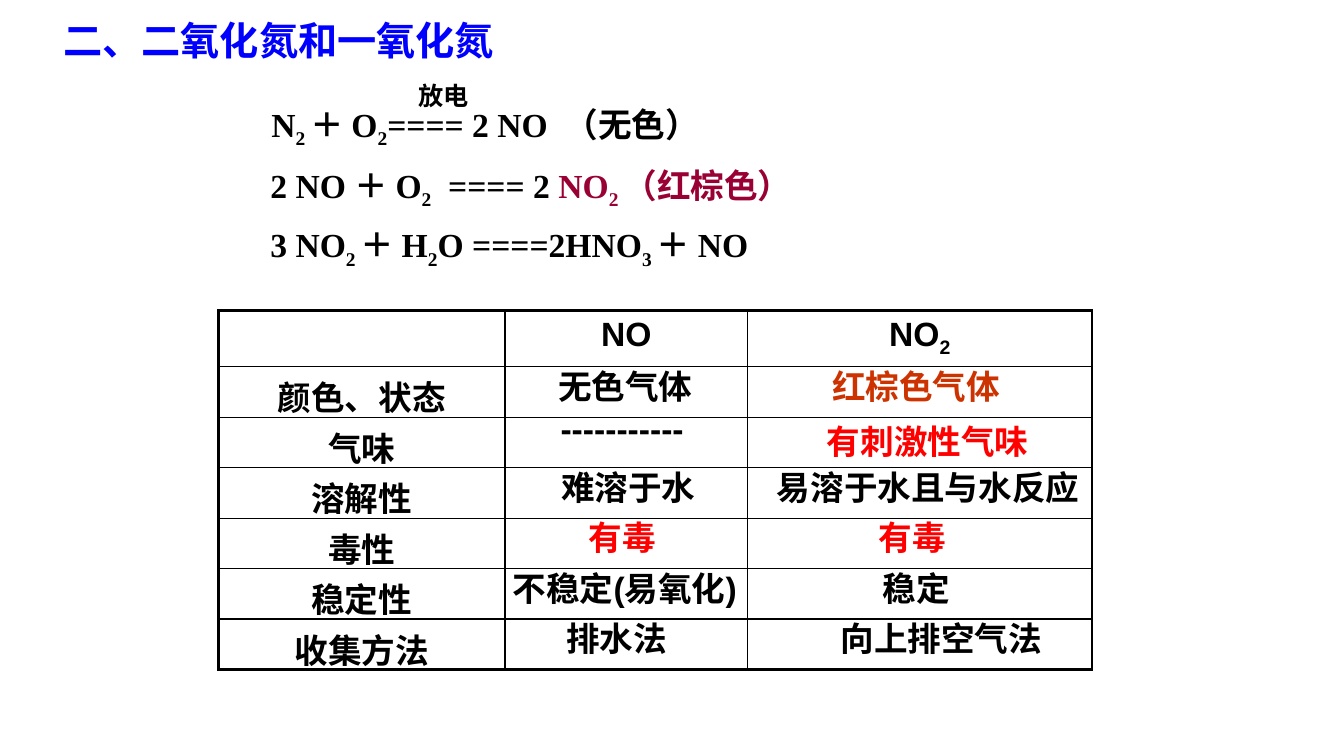
from pptx import Presentation
from pptx.dml.color import RGBColor
from pptx.enum.text import MSO_ANCHOR, MSO_AUTO_SIZE, PP_ALIGN
from pptx.oxml.ns import qn
from pptx.util import Emu, Pt
from lxml import etree

PX = 9525  # EMU per px
COLORS = {"black": "000000", "blue": "0000FF", "red": "FF0000",
          "orange": "CC3300", "wine": "990033", "white": "FFFFFF"}
CJK = "Noto Sans CJK SC"
SERIF = "Times New Roman"

# Content: a run is (text, format changes)
SUB = {"sub": True}
ARIAL = {"font": "Arial"}
WINE = {"color": "wine"}
TITLE = ("二、二氧化氮和一氧化氮", (51, 6, 506, 70))
CONDITION = ("放电", (389, 72, 112, 38))
EQUATIONS = [
    ((249, 94, 475), [("N", {}), ("2 ", SUB), ("＋ O", {}), ("2", SUB),
                      ("==== 2 NO  ", {}), ("（无色）", ARIAL)]),
    ((248, 152, 616), [("2 NO ＋ O", {}), ("2", SUB), ("  ==== 2 ", {}),
                       ("NO", WINE), ("2 ", WINE | SUB),
                       ("（红棕色）", WINE | ARIAL)]),
    ((248, 209, 589), [("3 NO", {}), ("2 ", SUB), ("＋ H", {}), ("2", SUB),
                       ("O ====2HNO", {}), ("3 ", SUB), ("＋ NO", {})]),
]
HEADERS = [[], [("NO", {})], [("NO", {}), ("2", SUB)]]
# Each property: label, then answers as (text, color, left, width, shift down)
PROPERTIES = [
    ("颜色、状态", [("无色气体", "black", 456, 279, 0),
               ("红棕色气体", "orange", 782, 181, 0)]),
    ("气味", [("-----------", "black", 456, 273, -8),
            ("有刺激性气味", "red", 736, 295, 4)]),
    ("溶解性", [("难溶于水", "black", 472, 253, 0),
             ("易溶于水且与水反应", "black", 720, 328, 0)]),
    ("毒性", [("有毒", "red", 456, 273, 0), ("有毒", "red", 752, 234, 0)]),
    ("稳定性", [("不稳定(易氧化)", "black", 440, 310, 0),
             ("稳定", "black", 736, 273, 0)]),
    ("收集方法", [("排水法", "black", 448, 279, 0),
              ("向上排空气法", "black", 760, 273, 0)]),
]
TABLE_LEFT, TABLE_TOP, ROW_H = 208, 296, 48
COL_W = [273, 231, 328]
THIN, THICK = 1, 2.25


def px(*values):
    return [Emu(v * PX) for v in values]


def add_runs(p, runs, **base):
    for text, changes in runs:
        fmt = {"font": "Arial", "size": 24, "color": "black"} | base | changes
        r = p.add_run()
        r.text = text
        for name, value in {"name": fmt["font"], "size": Pt(fmt["size"]),
                            "bold": True}.items():
            setattr(r.font, name, value)
        r.font.color.rgb = RGBColor.from_string(COLORS[fmt["color"]])
        rpr = r.font._element
        if fmt["font"] == CJK:
            etree.SubElement(rpr, qn("a:ea")).set("typeface", CJK)
        if fmt.get("sub"):
            rpr.set("baseline", "-25000")


def add_text(box, runs, align=PP_ALIGN.LEFT, frame=None, **base):
    tf = s.shapes.add_textbox(*px(*box)).text_frame
    settings = {"word_wrap": True, "auto_size": MSO_AUTO_SIZE.SHAPE_TO_FIT_TEXT}
    for name, value in (settings | (frame or {})).items():
        setattr(tf, name, value)
    p = tf.paragraphs[0]
    p.alignment = align
    add_runs(p, runs, **base)
    return p


def set_borders(cell, widths):
    tcpr = cell._tc.get_or_add_tcPr()
    for i, (side, width) in enumerate(widths.items()):
        ln = etree.Element(qn(f"a:ln{side}"), w=str(Pt(width)))
        fill = etree.SubElement(ln, qn("a:solidFill"))
        etree.SubElement(fill, qn("a:srgbClr")).set("val", COLORS["black"])
        tcpr.insert(i, ln)


prs = Presentation()
prs.slide_width, prs.slide_height = px(1280, 720)
s = prs.slides.add_slide(prs.slide_layouts[6])

# Title and equations
p = add_text(TITLE[1], [(TITLE[0], {})], font=CJK, size=28, color="blue",
             frame={"auto_size": MSO_AUTO_SIZE.NONE,
                    "vertical_anchor": MSO_ANCHOR.MIDDLE})
p.line_spacing = 0.9
add_text(CONDITION[1], [(CONDITION[0], {})], font=CJK, size=18)
for box, runs in EQUATIONS:
    add_text((*box, ROW_H), runs, font=SERIF)

# Table grid with headers and property labels
rows = [HEADERS] + [[[(label, {})], [], []] for label, _ in PROPERTIES]
table = s.shapes.add_table(len(rows), len(COL_W), *px(
    TABLE_LEFT, TABLE_TOP, sum(COL_W), ROW_H * len(rows))).table
table.first_row = table.horz_banding = False
for col, width in zip(table.columns, COL_W):
    col.width = Emu(width * PX)
for i, row in enumerate(rows):
    table.rows[i].height = Emu(ROW_H * PX)
    for j, runs in enumerate(row):
        cell = table.cell(i, j)
        cell.fill.background()
        p = cell.text_frame.paragraphs[0]
        p.alignment = PP_ALIGN.CENTER
        add_runs(p, runs)
        outer = {"L": j == 0, "R": j == len(COL_W) - 1,
                 "T": i == 0, "B": i == len(rows) - 1}
        set_borders(cell, {side: THICK if edge else THIN
                           for side, edge in outer.items()})

# Answers laid over the grid
for i, (_, answers) in enumerate(PROPERTIES, start=1):
    for text, color, left, width, shift in answers:
        add_text((left, TABLE_TOP + i * ROW_H + shift, width, ROW_H),
                 [(text, {})], PP_ALIGN.CENTER, color=color)

prs.save("out.pptx")
